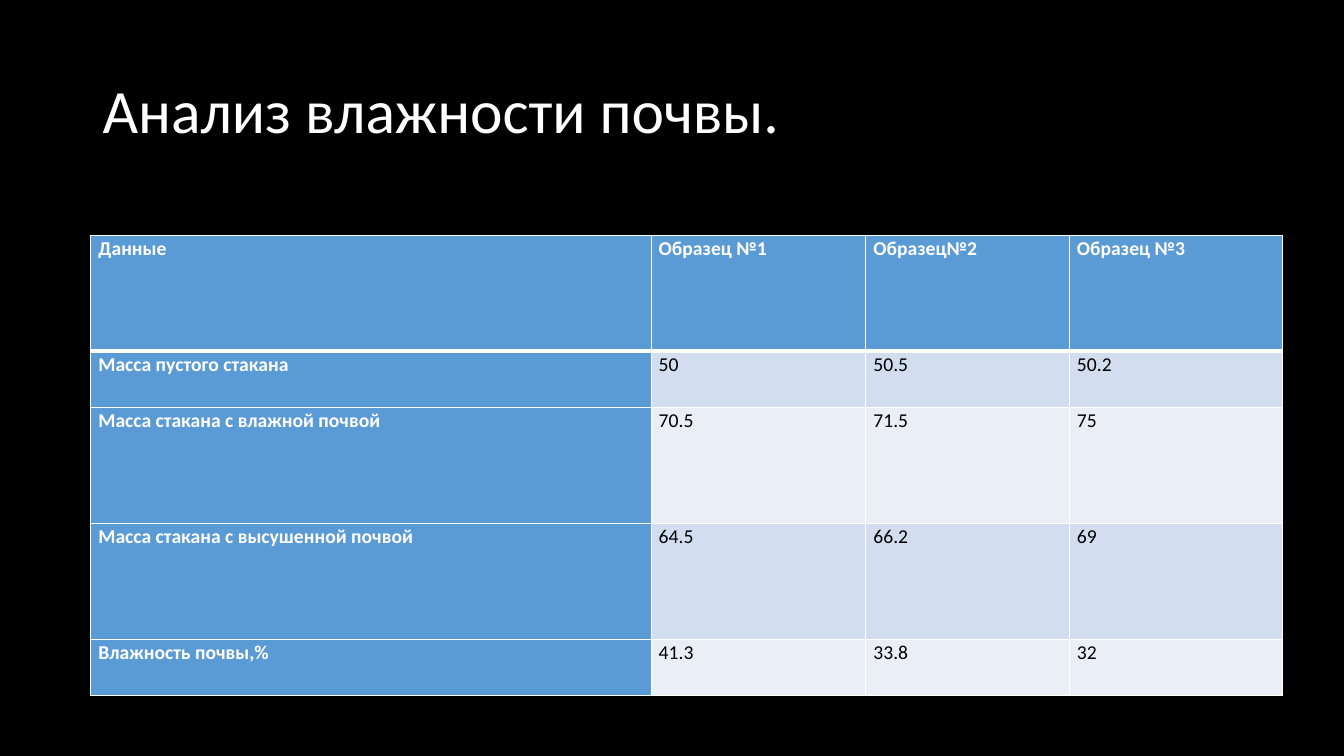
import pptx
import pptx.util
import pptx.dml.color
import pptx.enum.text
import pptx.oxml
import pptx.oxml.ns
from pptx.util import Cm, Pt
from pptx.dml.color import RGBColor

# Content
TITLE = "Анализ влажности почвы."
ROWS = [
    ("Данные", "Образец №1", "Образец№2", "Образец №3"),
    ("Масса пустого стакана", "50", "50.5", "50.2"),
    ("Масса стакана с влажной почвой", "70.5", "71.5", "75"),
    ("Масса стакана с высушенной почвой", "64.5", "66.2", "69"),
    ("Влажность почвы,%", "41.3", "33.8", "32"),
]

# Layout in centimetres
COL_WIDTHS = (14.12, 5.41, 5.13, 5.38)
TALL, SHORT = 2.92, 1.42
ROW_HEIGHTS = (TALL, SHORT, TALL, TALL, SHORT)

# Style
FONT = "Calibri"
BLACK = RGBColor(0x00, 0x00, 0x00)
WHITE = RGBColor(0xFF, 0xFF, 0xFF)
HEADER_BLUE = RGBColor(0x5B, 0x9B, 0xD5)
BANDS = (RGBColor(0xEA, 0xEF, 0xF7), RGBColor(0xD2, 0xDE, 0xEF))


def format_text(p, size, color, bold, spacing):
    p.line_spacing = spacing
    for r in p.runs:
        r.font.name = FONT
        r.font.size = Pt(size)
        r.font.bold = bold
        r.font.color.rgb = color


def add_border(cell, side, width):
    ns = pptx.oxml.ns.nsdecls("a")
    line = pptx.oxml.parse_xml(
        f'<a:ln{side} {ns} w="{Pt(width)}"><a:solidFill>'
        f'<a:srgbClr val="{WHITE}"/></a:solidFill></a:ln{side}>')
    cell._tc.get_or_add_tcPr().append(line)


def add_title(slide):
    sp = slide.shapes.title
    sp.left, sp.top, sp.width, sp.height = Cm(2.33), Cm(1.01), Cm(29.21), Cm(3.68)
    tf = sp.text_frame
    tf.text = TITLE
    tf.vertical_anchor = pptx.enum.text.MSO_ANCHOR.MIDDLE
    p = tf.paragraphs[0]
    p.alignment = pptx.enum.text.PP_ALIGN.LEFT
    format_text(p, 44, WHITE, False, 0.9)


def fill_cell(cell, text, row, col):
    is_header = row == 0 or col == 0
    cell.margin_left = cell.margin_right = Cm(0.19)
    cell.margin_top = cell.margin_bottom = 0

    # Thick line between the header row and the data
    for side in "LRTB":
        thick = (row, side) in ((0, "B"), (1, "T"))
        add_border(cell, side, 3 if thick else 1)
    cell.fill.solid()
    cell.fill.fore_color.rgb = HEADER_BLUE if is_header else BANDS[row % 2]

    cell.text_frame.text = text
    format_text(cell.text_frame.paragraphs[0], 14,
                WHITE if is_header else BLACK, is_header, 1.07)


def add_moisture_table(slide):
    table = slide.shapes.add_table(
        len(ROWS), len(COL_WIDTHS), Cm(2.29), Cm(5.93),
        Cm(sum(COL_WIDTHS)), Cm(sum(ROW_HEIGHTS))).table
    for column, width in zip(table.columns, COL_WIDTHS):
        column.width = Cm(width)
    for table_row, height in zip(table.rows, ROW_HEIGHTS):
        table_row.height = Cm(height)
    for row, texts in enumerate(ROWS):
        for col, text in enumerate(texts):
            fill_cell(table.cell(row, col), text, row, col)


def main():
    prs = pptx.Presentation()
    prs.slide_width, prs.slide_height = Cm(33.87), Cm(19.05)
    slide = prs.slides.add_slide(prs.slide_layouts.get_by_name("Title Only"))
    slide.background.fill.solid()
    slide.background.fill.fore_color.rgb = BLACK
    add_title(slide)
    add_moisture_table(slide)
    prs.save("out.pptx")


if __name__ == "__main__":
    main()
